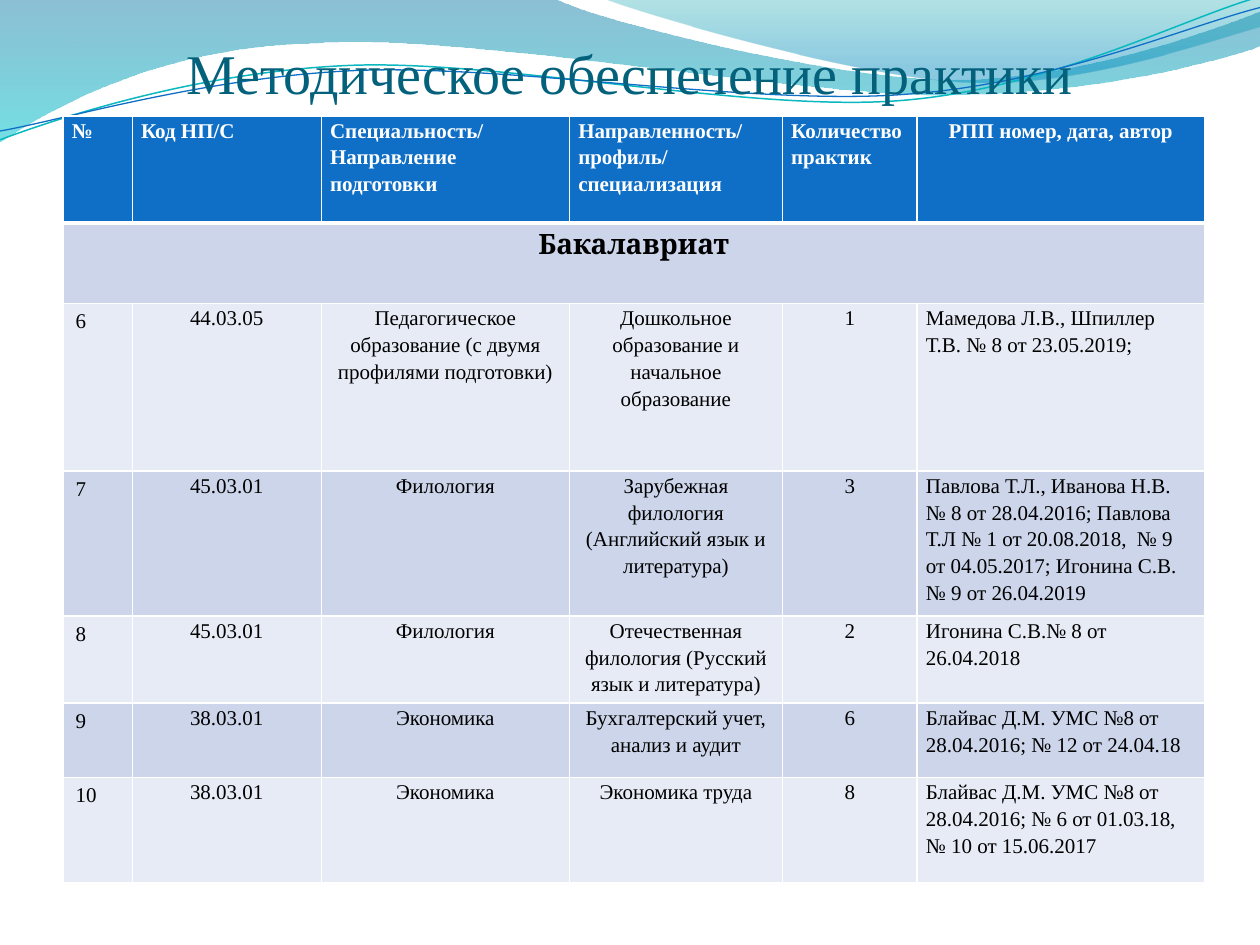
from lxml import etree
from pptx import Presentation
from pptx.dml.color import RGBColor
from pptx.enum import text
from pptx.oxml import ns
from pptx.util import Inches, Pt

SERIF = "Times New Roman"
WHITE, BLACK, BLUE, TEAL = "FFFFFF", "000000", "0F6FC6", "04617B"
BANDS = ["E7EBF5", "CCD5EA"]
LEFT, CENTER = text.PP_ALIGN.LEFT, text.PP_ALIGN.CENTER

COLUMN_WIDTHS = [0.55, 1.5, 1.97, 1.69, 1.07, 2.28]
ROW_HEIGHTS = [0.85, 0.64, 1.33, 1.04, 0.68, 0.59, 0.84]
HEADINGS = ["№", "Код НП/С", "Специальность/ Направление подготовки",
            "Направленность/ профиль/ специализация", "Количество практик",
            "РПП номер, дата, автор"]
PROGRAMMES = [
    ["6", "44.03.05", "Педагогическое образование (с двумя профилями подготовки)",
     "Дошкольное образование и начальное образование", "1",
     "Мамедова Л.В., Шпиллер Т.В. № 8 от 23.05.2019;"],
    ["7", "45.03.01", "Филология",
     "Зарубежная филология (Английский язык и литература)", "3",
     "Павлова Т.Л., Иванова Н.В.  № 8 от 28.04.2016; Павлова Т.Л № 1 от 20.08.2018,  "
     "№ 9 от 04.05.2017; Игонина С.В. № 9 от 26.04.2019"],
    ["8", "45.03.01", "Филология",
     "Отечественная филология (Русский язык и литература)", "2",
     "Игонина С.В.№ 8 от 26.04.2018"],
    ["9", "38.03.01", "Экономика", "Бухгалтерский учет, анализ и аудит", "6",
     "Блайвас Д.М. УМС №8 от 28.04.2016; № 12 от 24.04.18"],
    ["10", "38.03.01", "Экономика", "Экономика труда", "8",
     "Блайвас Д.М. УМС №8 от 28.04.2016; № 6 от 01.03.18, № 10 от 15.06.2017"],
]

# Each outline: a start point, then line ends (2 numbers) or cubic curves (6 numbers).
LEFT_WAVE = [(0, 0), (4.4, -0.01), (4.76, 0.17, 6.64, 0.63, 7.58, 0.63),
             (8.53, 0.63, 9.58, 0.26, 10, 0.09), (10.01, 0.36),
             (9.83, 0.44, 8.7, 0.76, 7.46, 0.75), (6.22, 0.75, 3.82, 0.28, 2.57, 0.34),
             (1.29, 0.36, 0.46, 0.83, -0.01, 1.13), (0, 0)]
RIGHT_WAVE = [(4.79, -0.01), (5.09, 0.11, 6.82, 0.62, 7.69, 0.65),
              (8.56, 0.69, 9.61, 0.32, 10, 0.21), (10, 0), (4.79, -0.01)]
TEAL_CURVE = [(0, 1.11), (0.48, 0.93, 1.58, 0.57, 2.77, 0.52),
              (3.95, 0.47, 5.93, 0.89, 7.13, 0.8), (8.33, 0.71, 9.38, 0.15, 9.98, -0.02)]
BLUE_CURVE = [(0, 1.04), (0.47, 0.96, 1.64, 0.61, 2.83, 0.56),
              (4.03, 0.51, 5.97, 0.84, 7.17, 0.75), (8.36, 0.67, 9.41, 0.21, 10, 0.06)]


def color(value):
    return RGBColor.from_string(value)


def add_outline(page, outline, close):
    """Build the end points as a freeform, then bend its segments into cubic curves."""
    ends = [(Inches(part[-2]), Inches(part[-1])) for part in outline]
    builder = page.shapes.build_freeform(*ends[0])
    builder.add_line_segments(ends[1:], close=close)
    shape = builder.convert_to_shape()
    shape.shadow.inherit = False
    segments = list(shape._element.iter(ns.qn("a:lnTo")))
    for segment, part in zip(segments, outline[1:]):
        if len(part) == 6:
            curve = etree.Element(ns.qn("a:cubicBezTo"))
            for x, y in zip(part[::2], part[1::2]):
                etree.SubElement(curve, ns.qn("a:pt"), x=str(Inches(x) - shape.left),
                                 y=str(Inches(y) - shape.top))
            segment.getparent().replace(segment, curve)
    return shape


def add_wave(page, outline, stops):
    """Stops are (position, colour, opacity percent), from top to bottom."""
    wave = add_outline(page, outline, close=True)
    wave.line.fill.background()
    wave.fill.gradient()
    wave.fill.gradient_angle = 270
    for stop, (position, value, _) in zip(wave.fill.gradient_stops, stops):
        stop.position = position
        stop.color.rgb = color(value)
    for tint, (_, _, opacity) in zip(wave._element.spPr.iter(ns.qn("a:srgbClr")), stops):
        etree.SubElement(tint, ns.qn("a:alpha"), val=str(opacity * 1000))


def add_curve(page, outline, value, width):
    curve = add_outline(page, outline, close=False)
    curve.fill.background()
    curve.line.color.rgb = color(value)
    curve.line.width = Pt(width)


def write(frame, words, size, value, align=LEFT, bold=False, font=SERIF, spacing=None):
    para = frame.paragraphs[0]
    para.alignment = align
    para.line_spacing = spacing
    span = para.add_run()
    span.text = words
    span.font.size, span.font.name, span.font.bold = Pt(size), font, bold
    span.font.color.rgb = color(value)
    etree.SubElement(para._p, ns.qn("a:endParaRPr"), sz=str(size * 100))


def add_title(page, words):
    box = page.shapes.add_textbox(Inches(0.5), Inches(0.77), Inches(9), Inches(0.07))
    frame = box.text_frame
    frame.word_wrap = True
    frame.vertical_anchor = text.MSO_ANCHOR.BOTTOM
    frame.margin_left = frame.margin_right = frame.margin_bottom = 0
    frame.margin_top = Inches(0.05)
    write(frame, words, 32, TEAL, CENTER)


def style_cell(cell, fill, top=1, bottom=1):
    properties = cell._tc.get_or_add_tcPr()
    for side, width in [("L", 1), ("R", 1), ("T", top), ("B", bottom)]:
        edge = etree.SubElement(properties, ns.qn("a:ln" + side), w=str(Pt(width)))
        solid = etree.SubElement(edge, ns.qn("a:solidFill"))
        etree.SubElement(solid, ns.qn("a:srgbClr"), val=WHITE)
    cell.fill.solid()
    cell.fill.fore_color.rgb = color(fill)


def tighten(cell):
    cell.margin_left = cell.margin_right = Inches(0.07)
    cell.margin_top = cell.margin_bottom = 0


def add_programme_table(page):
    table = page.shapes.add_table(
        len(ROW_HEIGHTS), len(COLUMN_WIDTHS), Inches(0.5), Inches(0.92),
        Inches(sum(COLUMN_WIDTHS)), Inches(6.26)).table
    for column, width in zip(table.columns, COLUMN_WIDTHS):
        column.width = Inches(width)
    for row, height in zip(table.rows, ROW_HEIGHTS):
        row.height = Inches(height)

    last = len(HEADINGS) - 1
    for index, heading in enumerate(HEADINGS):
        cell = table.cell(0, index)
        style_cell(cell, BLUE, bottom=3)
        tighten(cell)
        write(cell.text_frame, heading, 12, WHITE, CENTER if index == last else LEFT,
              bold=True, spacing=1.15)
        style_cell(table.cell(1, index), BANDS[1], top=3)

    level = table.cell(1, 0)
    level.merge(table.cell(1, last))
    write(level.text_frame, "Бакалавриат", 16, BLACK, CENTER, bold=True, font="Cambria")

    for number, programme in enumerate(PROGRAMMES):
        for index, words in enumerate(programme):
            cell = table.cell(number + 2, index)
            style_cell(cell, BANDS[number % 2])
            if index == 0:
                write(cell.text_frame, words, 12, BLACK)
            else:
                tighten(cell)
                write(cell.text_frame, words, 12, BLACK,
                      LEFT if index == last else CENTER, spacing=1.15)


def main():
    deck = Presentation()
    deck.slide_width, deck.slide_height = Inches(10), Inches(7.5)
    page = deck.slides.add_slide(deck.slide_layouts[6])
    add_wave(page, LEFT_WAVE, [(0, "0074A1", 45), (1, "00C6CF", 55)])
    add_wave(page, RIGHT_WAVE, [(0, "00A1A9", 30), (0.8, "008BBF", 45)])
    add_curve(page, TEAL_CURVE, "0AB8BF", 0.85)
    add_curve(page, BLUE_CURVE, BLUE, 0.75)
    add_title(page, "Методическое обеспечение практики")
    add_programme_table(page)
    deck.save("out.pptx")


if __name__ == "__main__":
    main()
